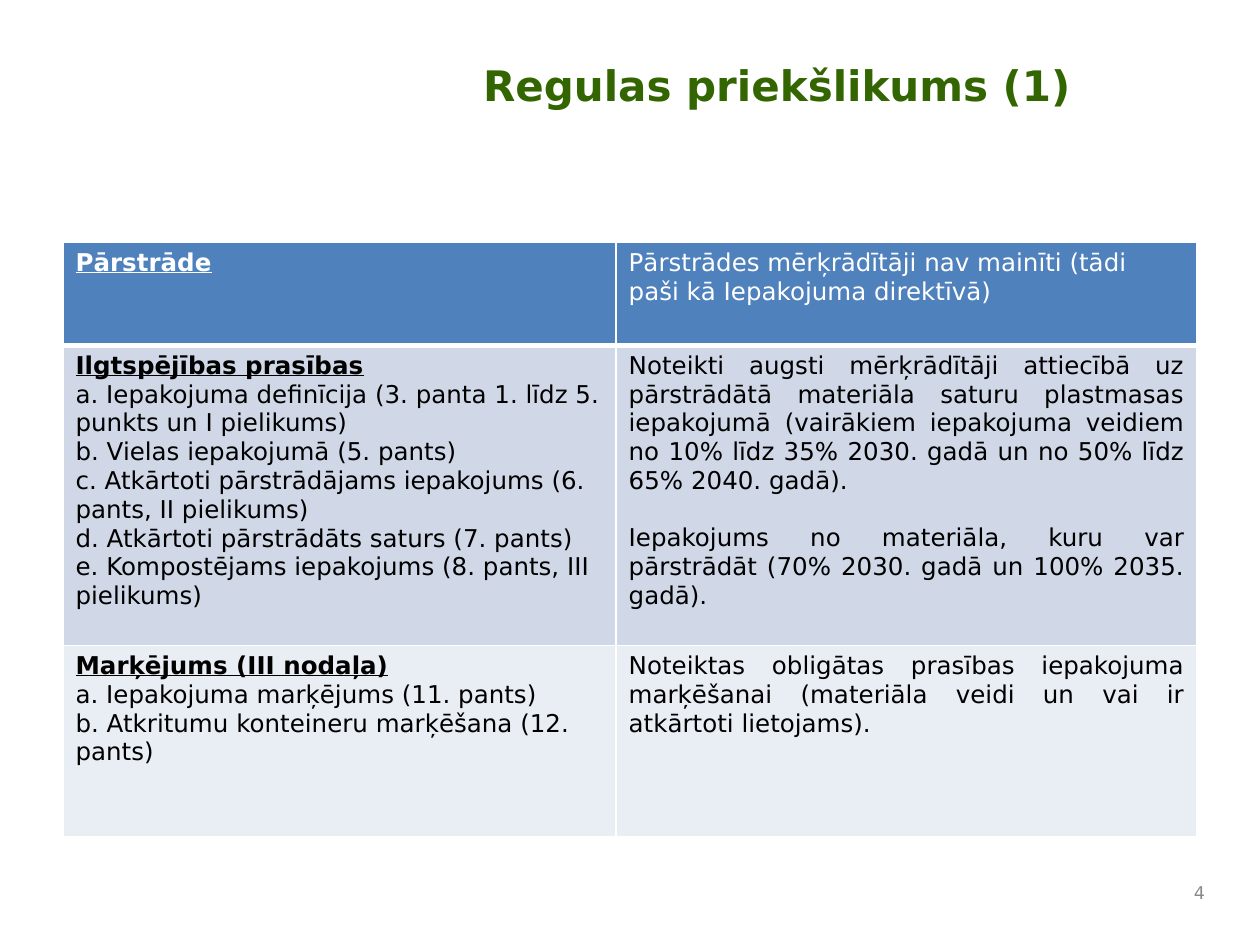
import pptx
import pptx.dml.color
import pptx.enum.text
import pptx.oxml
import pptx.oxml.ns
import pptx.util

Cm = pptx.util.Cm
Pt = pptx.util.Pt
ALIGN = pptx.enum.text.PP_ALIGN
ANCHOR = pptx.enum.text.MSO_ANCHOR
FONT = "DejaVu Sans"
WHITE, BLACK = "FFFFFF", "000000"
COLS = [11.15, 11.71]
ROWS = [2.08, 6.05, 3.86]
FILLS = ["4F81BD", "D0D8E8", "E9EDF4"]
LEFT = [
    ["Pārstrāde"],
    [
        "Ilgtspējības prasības",
        "a. Iepakojuma definīcija (3. panta 1. līdz 5. punkts un I pielikums)",
        "b. Vielas iepakojumā (5. pants)",
        "c. Atkārtoti pārstrādājams iepakojums (6. pants, II pielikums)",
        "d. Atkārtoti pārstrādāts saturs (7. pants)",
        "e. Kompostējams iepakojums (8. pants, III pielikums)",
    ],
    [
        "Marķējums (III nodaļa)",
        "a. Iepakojuma marķējums (11. pants)",
        "b. Atkritumu konteineru marķēšana (12. pants)",
    ],
]
RIGHT = [
    ["Pārstrādes mērķrādītāji nav mainīti (tādi paši kā Iepakojuma direktīvā)"],
    [
        "Noteikti augsti mērķrādītāji attiecībā uz pārstrādātā materiāla saturu "
        "plastmasas iepakojumā (vairākiem iepakojuma veidiem no 10% līdz 35% "
        "2030. gadā un no 50% līdz 65% 2040. gadā).",
        "Iepakojums no materiāla, kuru var pārstrādāt (70% 2030. gadā un "
        "100% 2035. gadā).",
    ],
    [
        "Noteiktas obligātas prasības iepakojuma marķēšanai (materiāla veidi "
        "un vai ir atkārtoti lietojams).",
    ],
]


def shade(text):
    return pptx.dml.color.RGBColor.from_string(text)


def add_run(para, text, size, tint, bold=False, line=False):
    run = para.add_run()
    run.text = text
    font = run.font
    font.name, font.size = FONT, Pt(size)
    font.bold, font.underline = bold, line
    font.color.rgb = shade(tint)


def add_label(slide, box, text, size, tint, align, anchor, bold=False):
    frame = slide.shapes.add_textbox(*map(Cm, box)).text_frame
    frame.word_wrap = True
    frame.vertical_anchor = anchor
    para = frame.paragraphs[0]
    para.alignment = align
    add_run(para, text, size, tint, bold)


def set_edge(cell, side, width):
    space = pptx.oxml.ns.nsdecls("a")
    edge = pptx.oxml.parse_xml(
        f'<a:ln{side} {space} w="{Pt(width)}"><a:solidFill>'
        f'<a:srgbClr val="{WHITE}"/></a:solidFill></a:ln{side}>'
    )
    cell._tc.get_or_add_tcPr().append(edge)


def fill_cell(cell, lines, row, col):
    widths = {"L": 1, "R": 1, "T": 3 if row == 1 else 1, "B": 3 if row == 0 else 1}
    for side, width in widths.items():
        set_edge(cell, side, width)
    cell.fill.solid()
    cell.fill.fore_color.rgb = shade(FILLS[row])
    frame = cell.text_frame
    for i, text in enumerate(lines):
        para = frame.add_paragraph() if i else frame.paragraphs[0]
        para.alignment = ALIGN.JUSTIFY if row and col else ALIGN.LEFT
        if i and col:
            para.space_before = Pt(16.4)
        head = i == 0 and col == 0
        add_run(para, text, 14, BLACK if row else WHITE, head, head)


def add_grid(slide):
    table = slide.shapes.add_table(
        len(ROWS), len(COLS), Cm(1.27), Cm(4.88), Cm(sum(COLS)), Cm(sum(ROWS))
    ).table
    for col, width in enumerate(COLS):
        table.columns[col].width = Cm(width)
    for row, height in enumerate(ROWS):
        table.rows[row].height = Cm(height)
        for col, side in enumerate((LEFT, RIGHT)):
            fill_cell(table.cell(row, col), side[row], row, col)


def main():
    """Build the slide on the proposed regulation and save it."""
    deck = pptx.Presentation()
    deck.slide_width, deck.slide_height = Cm(25.4), Cm(19.05)
    slide = deck.slides.add_slide(deck.slide_layouts[6])
    add_label(slide, (7.19, 1.07, 16.94, 2.87), "Regulas priekšlikums (1)",
              24, "336600", ALIGN.CENTER, ANCHOR.TOP, True)
    add_grid(slide)
    add_label(slide, (23.7, 17.58, 0.84, 0.84), "4",
              10, "898989", ALIGN.RIGHT, ANCHOR.MIDDLE)
    deck.save("out.pptx")


if __name__ == "__main__":
    main()
